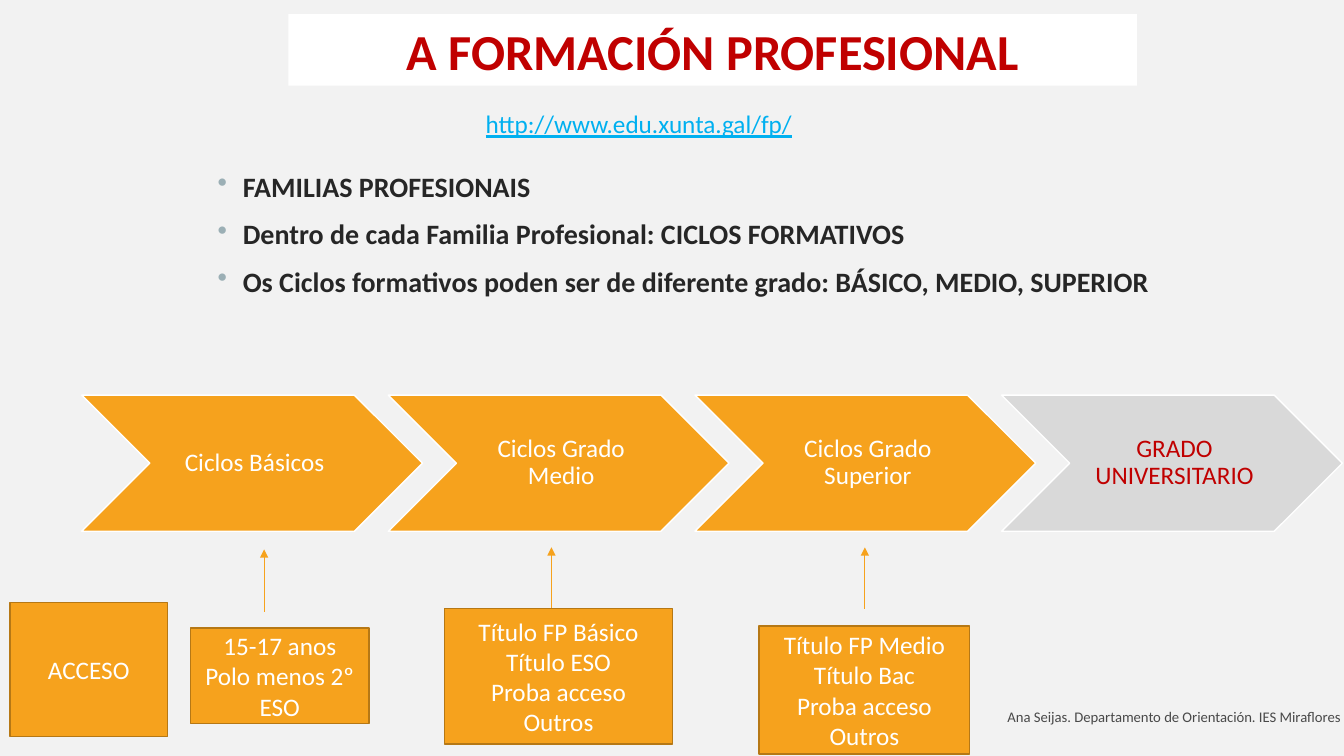
import pptx
import pptx.util
import pptx.dml.color
import pptx.enum.shapes
import pptx.enum.text
import pptx.oxml
from pptx.oxml.ns import qn

SHAPE = pptx.enum.shapes.MSO_SHAPE
ALIGN = pptx.enum.text.PP_ALIGN
ANCHOR = pptx.enum.text.MSO_ANCHOR

ORANGE, WHITE, RED = "F6A21D", "FFFFFF", "C00000"

# Places are left, top, width, height in percent of the slide.
TITLE = ("A FORMACIÓN PROFESIONAL", (21.45, 1.87, 63.15, 9.47))
ADDRESS = ("http://www.edu.xunta.gal/fp/", (35.4, 13.73, 33.83, 5.33))
POINTS = ([
    "FAMILIAS PROFESIONAIS",
    "Dentro de cada Familia Profesional: CICLOS FORMATIVOS",
    "Os Ciclos formativos poden ser de diferente grado: BÁSICO, MEDIO, SUPERIOR",
], (15.45, 21.73, 78.53, 20))
FOOTER = ("Ana Seijas. Departamento de Orientación. IES Miraflores",
          (38.03, 92.13, 62.48, 5.33))
STAGES = [
    ("Ciclos Básicos", ORANGE, WHITE),
    ("Ciclos Grado Medio", ORANGE, WHITE),
    ("Ciclos Grado Superior", ORANGE, WHITE),
    ("GRADO UNIVERSITARIO", "D9D9D9", RED),
]
FIRST_STAGE = (6.08, 52.27, 25.35, 18)
STAGE_PITCH = 0.9  # share of a chevron's width
ACCESS = [
    (["ACCESO"], (0.75, 79.73, 11.7, 17.73)),
    (["15-17 anos", "Polo menos 2º ESO"], (14.18, 83.07, 13.28, 12.67)),
    (["Título FP Básico", "Título ESO", "Proba acceso", "Outros"],
     (33.08, 80.53, 16.95, 17.87)),
    (["Título FP Medio", "Título Bac", "Proba acceso", "Outros"],
     (56.48, 82.8, 15.68, 16.93)),
]
ARROWS = [(19.65, 80.93, 72.67), (41.03, 80.53, 72.4), (64.35, 80.53, 72.4)]  # x, from, to

prs = pptx.Presentation()
prs.slide_width = pptx.util.Inches(13.33)
prs.slide_height = pptx.util.Inches(7.5)


def rgb(color):
    return pptx.dml.color.RGBColor.from_string(color)


def across(percent):
    return round(prs.slide_width * percent / 100)


def down(percent):
    return round(prs.slide_height * percent / 100)


def frame(place):
    """Turn a place in percent into lengths."""
    left, top, width, height = place
    return across(left), down(top), across(width), down(height)


def write(sp, lines, size=18, color=WHITE, bold=False, underline=False,
          align=ALIGN.CENTER, anchor=ANCHOR.MIDDLE, spacing=None, before=0, bullet=None):
    tf = sp.text_frame
    tf.word_wrap = True
    tf.auto_size = pptx.enum.text.MSO_AUTO_SIZE.NONE
    tf.vertical_anchor = anchor
    for i, line in enumerate([lines] if isinstance(lines, str) else lines):
        p = tf.add_paragraph() if i else tf.paragraphs[0]
        p.alignment = align
        p.space_before = pptx.util.Pt(before)
        if spacing:
            p.line_spacing = spacing
        if bullet:
            add_bullet(p, bullet)
        r = p.add_run()
        r.text = line
        r.font.name = "Calibri"
        r.font.size = pptx.util.Pt(size)
        r.font.bold = bold
        r.font.underline = underline
        r.font.color.rgb = rgb(color)


def add_bullet(p, color):
    pPr = p._p.get_or_add_pPr()
    indent = pptx.util.Inches(0.25)
    pPr.set("marL", str(indent))
    pPr.set("indent", str(-indent))
    buClr = pptx.oxml.xmlchemy.OxmlElement("a:buClr")
    srgb = pptx.oxml.xmlchemy.OxmlElement("a:srgbClr")
    srgb.set("val", color)
    buClr.append(srgb)
    buChar = pptx.oxml.xmlchemy.OxmlElement("a:buChar")
    buChar.set("char", "•")
    pPr.extend([buClr, buChar])


def add_box(s, kind, place, fill, line):
    sp = s.shapes.add_shape(kind, *frame(place))
    sp.shadow.inherit = False
    sp.fill.solid()
    sp.fill.fore_color.rgb = rgb(fill)
    sp.line.color.rgb = rgb(line)
    sp.line.width = pptx.util.Pt(1)
    return sp


def add_arrow(s, x, start, end):
    c = s.shapes.add_connector(pptx.enum.shapes.MSO_CONNECTOR.STRAIGHT,
                               across(x), down(start), across(x), down(end))
    c.line.color.rgb = rgb(ORANGE)
    c.line.width = pptx.util.Pt(0.5)
    head = pptx.oxml.xmlchemy.OxmlElement("a:tailEnd")
    head.set("type", "triangle")
    spPr = c._element.spPr
    spPr.find(qn("a:ln")).append(head)
    spPr.append(pptx.oxml.xmlchemy.OxmlElement("a:effectLst"))


def add_text(s, content, **style):
    text, place = content
    write(s.shapes.add_textbox(*frame(place)), text, **style)


def main():
    s = prs.slides.add_slide(prs.slide_layouts[5])
    s.background.fill.solid()
    s.background.fill.fore_color.rgb = rgb("F2F2F2")

    text, place = TITLE
    title = s.shapes.title
    title.left, title.top, title.width, title.height = frame(place)
    title.fill.solid()
    title.fill.fore_color.rgb = rgb(WHITE)
    write(title, text, size=36, color=RED, bold=True)

    add_text(s, ADDRESS, color="00B0F0", underline=True, align=ALIGN.LEFT, anchor=ANCHOR.TOP)
    add_text(s, POINTS, size=20, color="262626", bold=True, align=ALIGN.LEFT,
             anchor=ANCHOR.TOP, before=10, bullet="9BAFB5")
    add_text(s, FOOTER, size=10.5, color="494949", align=ALIGN.RIGHT)

    left, top, width, height = FIRST_STAGE
    for i, (text, fill, color) in enumerate(STAGES):
        place = (left + i * STAGE_PITCH * width, top, width, height)
        sp = add_box(s, SHAPE.CHEVRON, place, fill, WHITE)
        tf = sp.text_frame
        tf.margin_left = pptx.util.Inches(0.08)
        tf.margin_right = tf.margin_top = tf.margin_bottom = pptx.util.Inches(0.03)
        write(sp, text, color=color, spacing=0.9)

    for arrow in ARROWS:
        add_arrow(s, *arrow)
    for lines, place in ACCESS:
        write(add_box(s, SHAPE.RECTANGLE, place, ORANGE, "B67815"), lines)

    prs.save("out.pptx")


if __name__ == "__main__":
    main()
